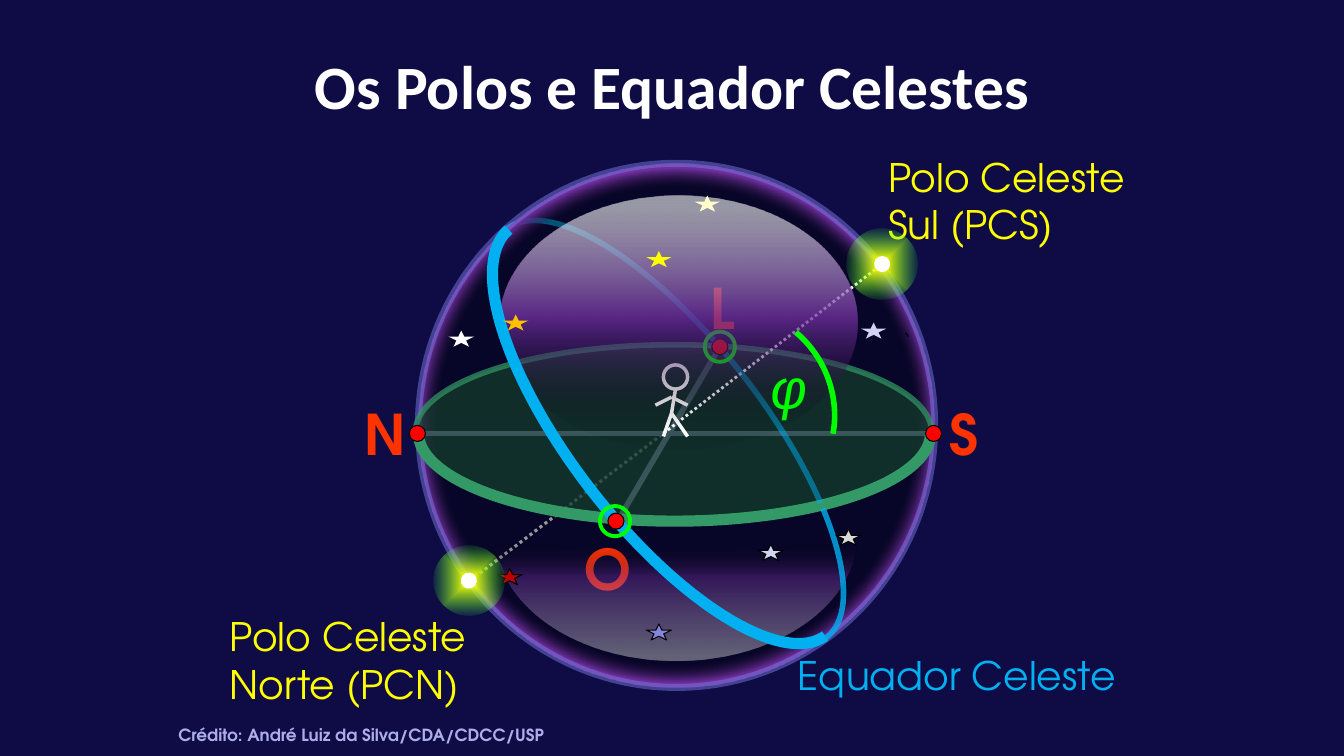
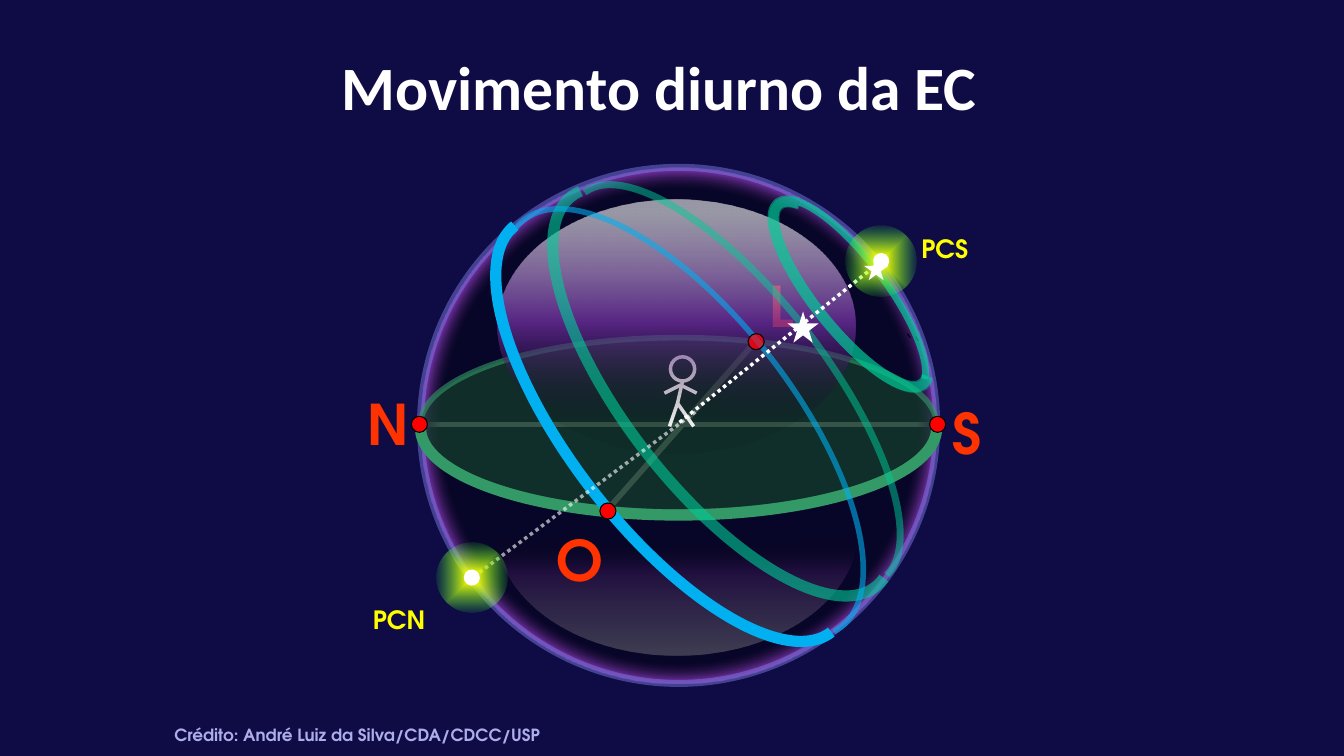
from dataclasses import dataclass

from lxml.etree import SubElement
from pptx import Presentation
from pptx.dml.color import RGBColor
from pptx.enum.dml import MSO_LINE
from pptx.enum.shapes import MSO_CONNECTOR, MSO_SHAPE
from pptx.enum.text import MSO_ANCHOR, PP_ALIGN
from pptx.oxml.ns import qn
from pptx.util import Inches, Pt


@dataclass(frozen=True)
class Theme:
    night: str = "0F0B45"
    white: str = "FFFFFF"
    black: str = "000000"
    yellow: str = "FFFF00"
    sky: str = "00B0F0"
    teal: str = "00CC99"
    lime: str = "00FF00"
    red: str = "FF0000"
    cardinal: str = "FF3300"
    lavender: str = "A5A5E9"
    credit: str = "ADADEB"
    rim: str = "7878DE"
    ground: str = "143C2B"
    horizon: str = "339966"
    title_font: str = "Calibri"
    body_font: str = "TeX Gyre Adventor"
    symbol_font: str = "Arial"
    title_size: int = 44
    letter_size: int = 40
    label_size: int = 28
    short_size: int = 18
    credit_size: int = 12


THEME = Theme()
CREDIT = "Crédito: André Luiz da Silva/CDA/CDCC/USP"
DOT, GLOW, HEAD, RING = 0.16, 0.7, 0.24, 0.3
STAR = (0.25, 0.16)
TILT = 142.1

# Gradient: stops of (position %, colour, opacity %), then an angle or a path kind
SPHERE_FILL = [(65, "000000", 40), (70, "7030A0", 100)], "circle"
GLOW_FILL = [(7, "FFFF00", 100), (77, "21FF46", 2)], "shape"
UPPER_FILL = [(6, "FFFFFF", 58), (48, "7030A0", 77), (91, "000000", 2)], 90
LOWER_FILL = [(3, "FFFFFF", 37), (68, "7030A0", 41), (94, "000000", 0)], 0

# Every part is (kind, arguments...), listed from back to front
POLES_AND_EQUATOR = [
    ("arc", (5.65, 1.73, 1.9, 5.11), (90, 157.9), TILT, THEME.sky, 4, 80),
    ("line", (4.61, 5.8), (6.58, 4.3), THEME.white, 2.25, True),
    ("label", "Polo Celeste Sul (PCS)", (8.71, 1.47, 2.68, 1.04), THEME.label_size),
    ("label", "Polo Celeste Norte (PCN)", (2.18, 6.03, 2.6, 1.04), THEME.label_size),
    ("sphere", (4.15, 1.62, 5.12, 5.2)),
    ("line", (6.12, 5.18), (7.14, 3.44), THEME.lavender, 4),
    ("line", (4.14, 4.3), (9.26, 4.3), THEME.lavender, 4),
    ("horizon", (4.12, 3.42, 5.12, 1.73), 70),
    ("letter", "O", (5.7, 5.25)),
    ("letter", "N", (3.52, 3.91)),
    ("letter", "L", (6.95, 2.66)),
    ("letter", "S", (9.32, 3.91)),
    ("line", (9.01, 3.34), (8.98, 3.3), THEME.black, 0.75),
    ("near_horizon", (4.15, 3.42, 5.08, 1.75)),
    ("line", (6.58, 4.3), (8.71, 2.65), THEME.white, 2, True),
    ("arc", (5.69, 1.75, 1.88, 5.11), (162.2, 242.4), TILT, THEME.sky, 4, 50),
    ("ring", (7.14, 3.44)),
    ("observer", (6.7, 3.74), (6.66, 3.94), (6.66, 4.1)),
    ("dot", (7.14, 3.44)),
    ("dot", (4.14, 4.3)),
    ("dot", (9.26, 4.3)),
    ("lower_dome", (6.09, 4.15, 1.23, 3.58)),
    ("label", "Equador Celeste", (7.6, 6.41, 3.78, 0.57), THEME.label_size,
     THEME.sky, False, True),
    ("arc", (5.69, 1.75, 1.88, 5.11), (243.7, 272.2), TILT, THEME.sky, 4, 80),
    ("upper_dome", (4.96, 1.94, 3.54, 2.52)),
    ("arc", (5.67, 1.73, 1.91, 5.11), (270.3, 89.7), TILT, THEME.sky, 8),
    ("ring", (6.1, 5.17)),
    ("dot", (6.11, 5.17)),
    ("arc", (6.57, 3.07, 1.69, 1.93), (325.2, 39.8), 337.8, THEME.lime, 4),
    ("star", (7.52, 5.4), "D2D2F4", STAR, True),
    ("star", (4.93, 5.64), "C00000", STAR, True),
    ("star", (6.41, 6.19), "8585E0", STAR, True),
    ("star", (8.29, 5.25), "D9D9D9", STAR, True),
    ("star", (8.54, 3.2), "D2D2F4"),
    ("star", (4.99, 3.12), "FFC000"),
    ("star", (4.45, 3.28), THEME.white),
    ("star", (6.41, 2.49), THEME.yellow),
    ("star", (6.89, 1.94), "FFFFCC"),
    ("pole", (8.75, 2.62)),
    ("pole", (4.65, 5.76)),
    ("latitude", "φ", (7.31, 3.45, 1.02, 0.77)),
]

DIURNAL_MOTION = [
    ("lower_dome", (6.1, 4.1, 1.23, 3.58)),
    ("line", (5.97, 5.12), (7.5, 3.38), THEME.white, 4),
    ("line", (4.17, 4.21), (9.29, 4.21), THEME.white, 4),
    ("sphere", (4.17, 1.66, 5.12, 5.12)),
    ("letter", "N", (3.55, 3.82)),
    ("letter", "L", (7.53, 2.64)),
    ("letter", "S", (9.35, 3.9)),
    ("horizon", (4.17, 3.35, 5.12, 1.73), 60),
    ("letter", "O", (5.42, 5.16)),
    ("line", (9.11, 3.38), (9.08, 3.34), THEME.black, 0.75),
    ("near_horizon", (4.17, 3.38, 5.12, 1.73)),
    ("observer", (6.77, 3.66), (6.75, 3.82), (6.72, 4.0)),
    ("dot", (4.16, 4.21)),
    ("dot", (7.5, 3.39)),
    ("dot", (9.3, 4.21)),
    ("upper_dome", (4.94, 1.98, 3.54, 2.52)),
    ("label", "PCS", (9.04, 2.27, 0.87, 0.4), THEME.short_size, THEME.yellow, True),
    ("label", "PCN", (3.6, 5.95, 0.87, 0.4), THEME.short_size, THEME.yellow, True),
    ("line", (9.03, 3.35), (9, 3.31), THEME.black, 0.75),
    ("arc", (8.08, 1.78, 0.71, 2.29), (98.3, 265.6), 143, THEME.teal, 5, 70),
    ("arc", (8.09, 1.78, 0.71, 2.29), (265.6, 99), 141.3, THEME.teal, 7.75, 35),
    ("arc", (6.38, 1.4, 1.8, 4.84), (90.1, 269.1), TILT, THEME.teal, 5, 50),
    ("arc", (6.2, 1.43, 1.95, 4.91), (267.2, 92.4), TILT, THEME.teal, 8, 60),
    ("arc", (8.08, 1.77, 0.71, 2.29), (265.6, 99), 141.3, THEME.teal, 8, 53),
    ("arc", (5.68, 1.64, 2.18, 5.12), (86.2, 271.9), TILT, THEME.sky, 4, 58),
    ("arc", (5.67, 1.7, 2.01, 5.11), (270, 90), TILT, THEME.sky, 8),
    ("dot", (6.03, 5.07)),
    ("dot", (7.5, 3.39), 65),
    ("line", (4.7, 5.72), (6.92, 4.07), THEME.white, 2.5, True, 60),
    ("line", (6.74, 4.19), (8.74, 2.59), THEME.white, 2.5, True),
    ("pole", (8.74, 2.59)),
    ("pole", (4.68, 5.73)),
    ("star", (8.57, 2.55), THEME.white, (0.24, 0.23)),
    ("star", (7.81, 3.09), THEME.white, (0.31, 0.31)),
]

# Title, title frame, left edge of the credit, parts
SLIDES = [
    ("Os Polos e Equador Celestes", (1.67, 0.22, 10, 1.25), 1.67, POLES_AND_EQUATOR),
    ("Movimento diurno da EC", (2.29, 0.23, 8.5, 1.25), 1.63, DIURNAL_MOTION),
]


def inches(lengths):
    return [Inches(length) for length in lengths]


def around(center, size):
    return (center[0] - size / 2, center[1] - size / 2, size, size)


def fade(shape, place, opacity):
    """Make the solid colour found at place inside the shape properties translucent."""
    if opacity < 100:
        color = shape.element.spPr.find("/".join(qn(tag) for tag in place))
        SubElement(color, qn("a:alpha"), val=str(opacity * 1000))


def set_line(shape, color, width, opacity=100):
    shape.line.color.rgb = RGBColor.from_string(color)
    shape.line.width = Pt(width)
    fade(shape, ("a:ln", "a:solidFill", "a:srgbClr"), opacity)


def set_gradient(shape, stops, direction):
    properties = shape.element.spPr
    gradient = SubElement(properties, qn("a:gradFill"), rotWithShape="1")
    properties.find(qn("a:prstGeom")).addnext(gradient)
    stop_list = SubElement(gradient, qn("a:gsLst"))
    for position, color, opacity in stops:
        stop = SubElement(stop_list, qn("a:gs"), pos=str(position * 1000))
        stop_color = SubElement(stop, qn("a:srgbClr"), val=color)
        SubElement(stop_color, qn("a:alpha"), val=str(opacity * 1000))
    if isinstance(direction, str):
        path = SubElement(gradient, qn("a:path"), path=direction)
        SubElement(path, qn("a:fillToRect"), dict.fromkeys("ltrb", "50000"))
    else:
        SubElement(gradient, qn("a:lin"), ang=str(direction * 60000), scaled="0")


def add_preset(slide, preset, frame, fill=None, opacity=100, rotation=0):
    """Add a shape without line; fill is a colour, a gradient or None."""
    shape = slide.shapes.add_shape(preset, *inches(frame))
    shape.shadow.inherit = False
    shape.rotation = rotation
    shape.line.fill.background()
    if fill is None:
        shape.fill.background()
    elif isinstance(fill, str):
        shape.fill.solid()
        shape.fill.fore_color.rgb = RGBColor.from_string(fill)
        fade(shape, ("a:solidFill", "a:srgbClr"), opacity)
    else:
        set_gradient(shape, *fill)
    return shape


def format_text(shape, text, size, color, font, bold=False, centered=False):
    frame = shape.text_frame
    frame.word_wrap = True
    frame.text = text
    paragraph = frame.paragraphs[0]
    paragraph.alignment = PP_ALIGN.CENTER if centered else PP_ALIGN.LEFT
    style = paragraph.runs[0].font
    style.size, style.bold, style.name = Pt(size), bold, font
    style.color.rgb = RGBColor.from_string(color)
    return style


def add_label(slide, text, frame, size, color=THEME.yellow, bold=False, centered=False):
    box = slide.shapes.add_textbox(*inches(frame))
    format_text(box, text, size, color, THEME.body_font, bold, centered)


def add_letter(slide, text, corner):
    add_label(slide, text, (*corner, 0.39, 0.77), THEME.letter_size, THEME.cardinal, True)


def add_latitude(slide, text, frame):
    box = slide.shapes.add_textbox(*inches(frame))
    box.rotation = 358.6
    style = format_text(box, text, THEME.letter_size, THEME.lime, THEME.symbol_font,
                        centered=True)
    style.italic = True


def add_line(slide, start, end, color, width, dotted=False, opacity=100):
    line = slide.shapes.add_connector(MSO_CONNECTOR.STRAIGHT, *inches(start + end))
    set_line(line, color, width, opacity)
    if dotted:
        line.line.dash_style = MSO_LINE.ROUND_DOT
    SubElement(line.element.spPr, qn("a:effectLst"))


def add_arc(slide, frame, degrees, rotation, color, width, opacity=100,
            fill=None, fill_opacity=100):
    arc = add_preset(slide, MSO_SHAPE.ARC, frame, fill, fill_opacity, rotation)
    for index, angle in enumerate(degrees):
        arc.adjustments[index] = angle * 0.6  # 60000 units a degree, over 100000
    set_line(arc, color, width, opacity)


def add_sphere(slide, frame):
    sphere = add_preset(slide, MSO_SHAPE.OVAL, frame, SPHERE_FILL)
    set_line(sphere, THEME.rim, 5, 50)


def add_horizon(slide, frame, line_opacity):
    horizon = add_preset(slide, MSO_SHAPE.OVAL, frame, THEME.ground, 73)
    set_line(horizon, THEME.horizon, 4, line_opacity)


def add_near_horizon(slide, frame):
    add_arc(slide, frame, (0, 180), 0, THEME.horizon, 8, 100, THEME.ground, 7)


def add_upper_dome(slide, frame):
    add_preset(slide, MSO_SHAPE.OVAL, frame, UPPER_FILL)


def add_lower_dome(slide, frame):
    dome = add_preset(slide, MSO_SHAPE.MOON, frame, LOWER_FILL, rotation=270)
    dome.adjustments[0] = 0.875


def add_dot(slide, center, opacity=100):
    dot = add_preset(slide, MSO_SHAPE.OVAL, around(center, DOT), THEME.red, opacity)
    set_line(dot, THEME.black, 0.75)


def add_ring(slide, center):
    ring = add_preset(slide, MSO_SHAPE.OVAL, around(center, RING))
    set_line(ring, THEME.lime, 2.75)


def add_star(slide, corner, color, size=STAR, outlined=False):
    star = add_preset(slide, MSO_SHAPE.STAR_5_POINT, corner + size, color)
    if outlined:
        set_line(star, THEME.black, 0.75)


def add_pole(slide, center):
    for size, fill in ((GLOW, GLOW_FILL), (DOT, THEME.white)):
        add_preset(slide, MSO_SHAPE.OVAL, around(center, size), fill, rotation=305.7)


def add_observer(slide, head, shoulder, hip):
    face = add_preset(slide, MSO_SHAPE.OVAL, around(head, HEAD))
    set_line(face, THEME.white, 2.5)
    add_line(slide, (head[0], head[1] + HEAD / 2), hip, THEME.white, 2.5)
    limbs = [(hip, 0.16, 0.23), (hip, -0.08, 0.23),
             (shoulder, 0.16, 0.08), (shoulder, -0.16, 0.08)]
    for joint, across, down in limbs:
        add_line(slide, joint, (joint[0] + across, joint[1] + down), THEME.white, 2.5)


BUILDERS = {
    "arc": add_arc, "line": add_line, "label": add_label, "letter": add_letter,
    "latitude": add_latitude, "sphere": add_sphere, "horizon": add_horizon,
    "near_horizon": add_near_horizon, "upper_dome": add_upper_dome,
    "lower_dome": add_lower_dome, "dot": add_dot, "ring": add_ring,
    "star": add_star, "pole": add_pole, "observer": add_observer,
}


def add_slide(presentation, title, title_frame, credit_left, parts):
    slide = presentation.slides.add_slide(presentation.slide_layouts[5])
    heading = slide.shapes.title
    heading.left, heading.top, heading.width, heading.height = inches(title_frame)
    heading.text_frame.vertical_anchor = MSO_ANCHOR.MIDDLE
    format_text(heading, title, THEME.title_size, THEME.white, THEME.title_font, True, True)
    for kind, *arguments in parts:
        BUILDERS[kind](slide, *arguments)
    add_label(slide, CREDIT, (credit_left, 7.14, 10.28, 0.3), THEME.credit_size,
              THEME.credit, True)


def main():
    presentation = Presentation()
    presentation.slide_width, presentation.slide_height = inches((13.33, 7.5))
    background = presentation.slide_master.background.fill
    background.solid()
    background.fore_color.rgb = RGBColor.from_string(THEME.night)
    for content in SLIDES:
        add_slide(presentation, *content)
    presentation.save("out.pptx")


if __name__ == "__main__":
    main()
